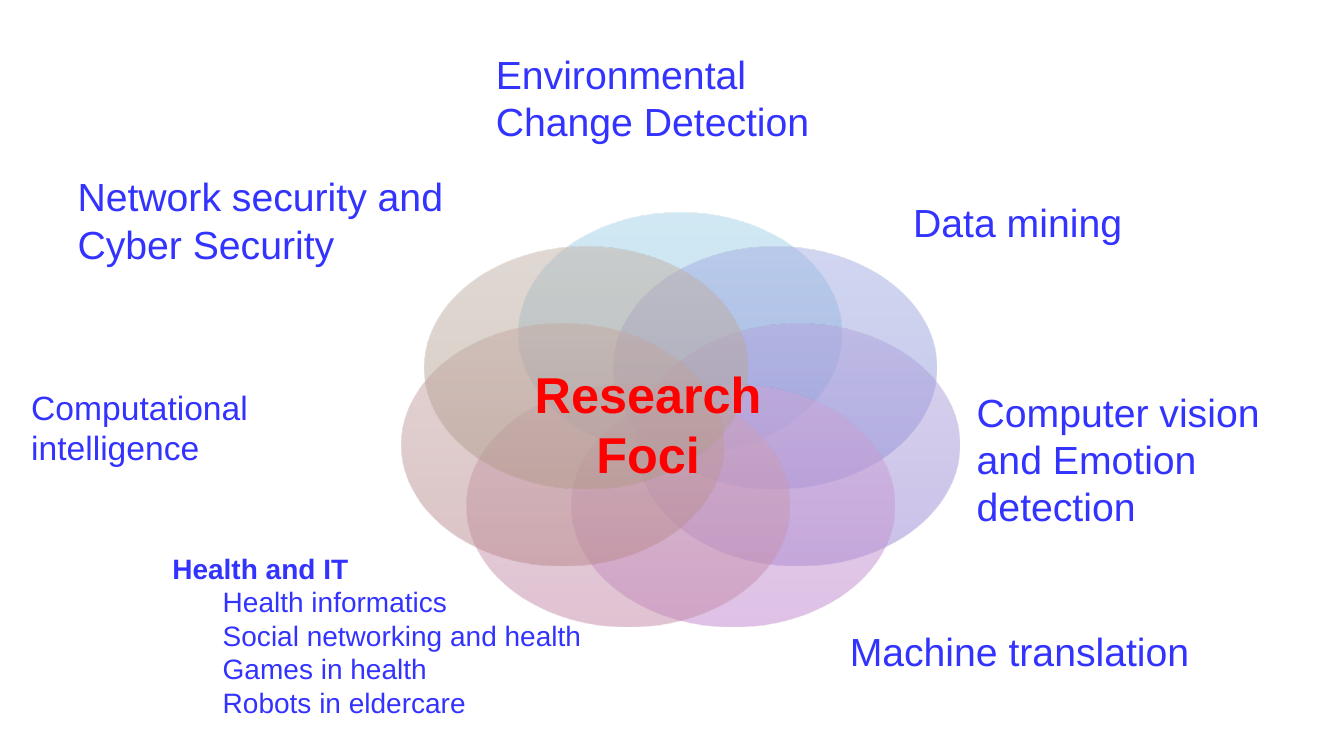
from math import cos, pi, sin

from lxml import etree
from pptx import Presentation
from pptx.dml.color import RGBColor
from pptx.enum.shapes import MSO_SHAPE
from pptx.enum.text import MSO_ANCHOR, MSO_AUTO_SIZE, PP_ALIGN
from pptx.oxml.ns import qn
from pptx.util import Pt

BLUE = RGBColor(0x33, 0x33, 0xFF)
RED = RGBColor(0xFF, 0x00, 0x00)

# Petal gradients, clockwise from the top: start, middle, end
PETALS = [
    ("A5D4E9", "97CCE4", "84C7E5"),
    ("A5AEE4", "97A1DE", "8491DE"),
    ("B2A5DE", "A697D8", "9784D6"),
    ("CEA6D8", "C698D2", "C185CE"),
    ("D3A6BD", "C999B2", "C487A7"),
    ("CCA7A8", "C19B9C", "BA898B"),
    ("C4B3A8", "BAA89C", "B19A8B"),
]
# Labels: text, size, (left, top, width, height)
LABELS = [
    ("Environmental Change Detection", 28, (354.2, 16.6, 264.2, 105.8)),
    ("Data mining", 28, (652.3, 100.1, 249.8, 116.6)),
    ("Computer vision and Emotion detection", 28, (697.7, 265.7, 244.8, 124.6)),
    ("Machine translation", 28, (607, 406.8, 249.8, 116.6)),
    ("Computational intelligence", 24, (22.3, 242.6, 244.8, 124.6)),
    ("Network security and Cyber Security", 28, (55.4, 100.1, 264.2, 113.8)),
]
HEALTH = ["Health and IT", "Health informatics", "Social networking and health",
          "Games in health", "Robots in eldercare"]
HEALTH_BOX = (123.1, 382.3, 319, 142.6)
CENTRE = ["Research", "Foci"]
CENTRE_BOX = (374.4, 255.6, 177.1, 94.3)

# Ring of petals
CX, CY = 486, 303
RING_X, RING_Y = 86.4, 64.8
PETAL_W, PETAL_H = 230.4, 172.8
ALPHA = 50

prs = Presentation()
prs.slide_width, prs.slide_height = Pt(960), Pt(540)
s = prs.slides.add_slide(prs.slide_layouts[6])


def gradient(sp, colours):
    """Fill a shape from top to bottom with evenly spaced translucent stops."""
    sp.fill.gradient()
    sp.fill.gradient_angle = 270
    stops = sp._element.spPr.find(qn("a:gradFill")).find(qn("a:gsLst"))
    for stop in list(stops):
        stops.remove(stop)
    for i, colour in enumerate(colours):
        stop = etree.SubElement(stops, qn("a:gs"), pos=str(i * 50000))
        clr = etree.SubElement(stop, qn("a:srgbClr"), val=colour)
        etree.SubElement(clr, qn("a:alpha"), val=str(ALPHA * 1000))


def add_run(p, text, size, colour, bold=False):
    r = p.add_run()
    r.text = text
    r.font.name, r.font.size, r.font.bold = "Arial", Pt(size), bold
    r.font.color.rgb = colour


def add_label(box):
    """Add a middle-anchored text box without margins."""
    tf = s.shapes.add_textbox(*map(Pt, box)).text_frame
    tf.word_wrap = True
    tf.vertical_anchor = MSO_ANCHOR.MIDDLE
    tf.margin_left = tf.margin_right = tf.margin_top = tf.margin_bottom = 0
    return tf


# Petals
for i, colours in enumerate(PETALS):
    angle = 2 * pi * i / len(PETALS)
    x = CX + RING_X * sin(angle) - PETAL_W / 2
    y = CY - RING_Y * cos(angle) - PETAL_H / 2
    sp = s.shapes.add_shape(MSO_SHAPE.OVAL, Pt(x), Pt(y), Pt(PETAL_W), Pt(PETAL_H))
    sp.shadow.inherit = False
    sp.line.fill.background()
    gradient(sp, colours)

# Labels around the ring
for text, size, box in LABELS:
    add_run(add_label(box).paragraphs[0], text, size, BLUE)

# Health label with its indented topics
tf = add_label(HEALTH_BOX)
for i, text in enumerate(HEALTH):
    p = tf.add_paragraph() if i else tf.paragraphs[0]
    if i:
        p.level = 1
        pPr = p._p.get_or_add_pPr()
        pPr.set("marL", str(Pt(36)))
        pPr.set("indent", "0")
    add_run(p, text, 20, BLUE, bold=i == 0)

# Centre caption
tf = s.shapes.add_textbox(*map(Pt, CENTRE_BOX)).text_frame
tf.word_wrap = False
tf.auto_size = MSO_AUTO_SIZE.SHAPE_TO_FIT_TEXT
for i, text in enumerate(CENTRE):
    p = tf.add_paragraph() if i else tf.paragraphs[0]
    p.alignment = PP_ALIGN.CENTER
    add_run(p, text, 36, RED, bold=True)

prs.save("out.pptx")
